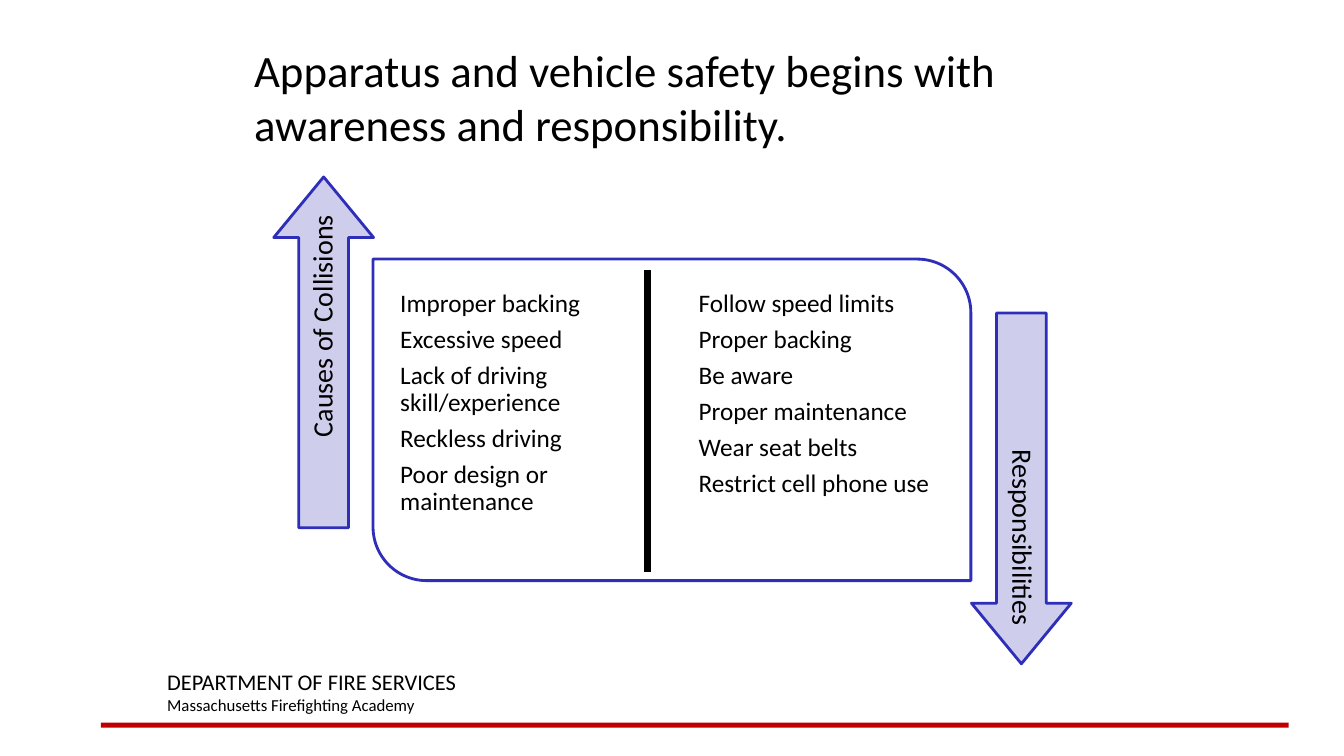
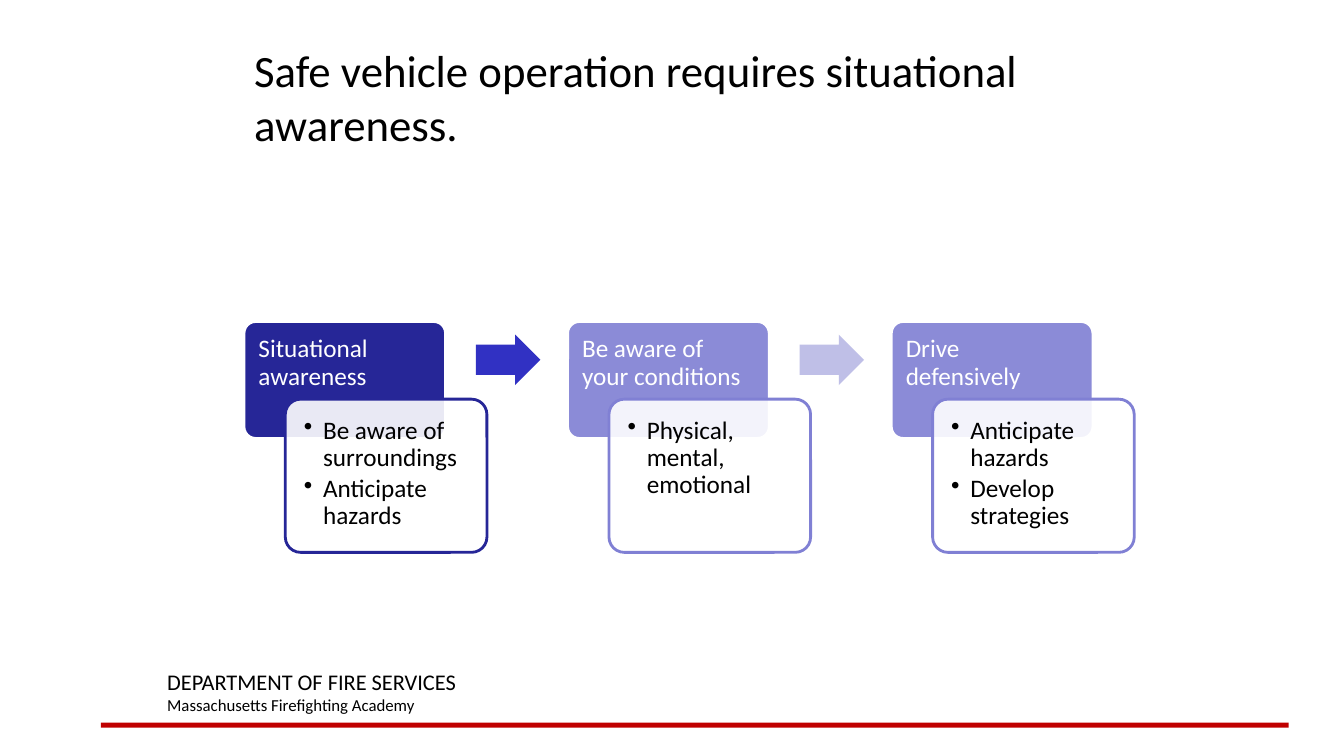
import pptx
import pptx.dml.color
import pptx.enum.shapes
import pptx.enum.text
import pptx.oxml.ns
import pptx.util
from lxml import etree

Inches = pptx.util.Inches
Pt = pptx.util.Pt
RGBColor = pptx.dml.color.RGBColor
SHAPE = pptx.enum.shapes.MSO_SHAPE
ANCHOR = pptx.enum.text.MSO_ANCHOR
ALIGN = pptx.enum.text.PP_ALIGN
qn = pptx.oxml.ns.qn

FONT = "Calibri"
BLACK = RGBColor(0x00, 0x00, 0x00)
WHITE = RGBColor(0xFF, 0xFF, 0xFF)
RED = RGBColor(0xC0, 0x00, 0x00)
BLUE = RGBColor(0x2E, 0x2E, 0xB9)
PALE_BLUE = RGBColor(0xCE, 0xCE, 0xEC)
NAVY = RGBColor(0x26, 0x26, 0x97)
LAVENDER = RGBColor(0x8B, 0x8B, 0xD7)
LAVENDER_EDGE = RGBColor(0x80, 0x80, 0xD4)
BRIGHT_BLUE = RGBColor(0x31, 0x31, 0xC3)
PALE_LAVENDER = RGBColor(0xBF, 0xBF, 0xE7)


def write(frame, lines, sizes=(18,), color=BLACK, align=ALIGN.LEFT, anchor=ANCHOR.TOP,
          insets=(0.1, 0.05, 0.1, 0.05), spacing=1.0, after=0, bullet_indent=0):
    """Fill a text frame; the last size holds for all remaining lines."""
    frame.word_wrap = True
    frame.vertical_anchor = anchor
    (frame.margin_left, frame.margin_top,
     frame.margin_right, frame.margin_bottom) = map(Inches, insets)
    for i, line in enumerate(lines):
        paragraph = frame.paragraphs[0] if i == 0 else frame.add_paragraph()
        paragraph.text = line
        if bullet_indent:
            properties = paragraph._p.get_or_add_pPr()
            properties.set("marL", str(Inches(bullet_indent)))
            properties.set("indent", str(-Inches(bullet_indent)))
            etree.SubElement(properties, qn("a:buChar")).set("char", "•")
        paragraph.alignment = align
        paragraph.line_spacing = spacing
        paragraph.space_before = Pt(0)
        paragraph.space_after = Pt(after)
        paragraph.font.name = FONT
        paragraph.font.size = Pt(sizes[min(i, len(sizes) - 1)])
        paragraph.font.color.rgb = color


def draw(slide, kind, box, fill, line=None, adjustments=()):
    """Add a flat preset shape with a plain fill and an optional 2 pt outline."""
    shape = slide.shapes.add_shape(kind, *map(Inches, box))
    shape.shadow.inherit = False
    shape.fill.solid()
    shape.fill.fore_color.rgb = fill
    if line is None:
        shape.line.fill.background()
    else:
        shape.line.color.rgb = line
        shape.line.width = Pt(2)
    for i, value in enumerate(adjustments):
        shape.adjustments[i] = value
    return shape


deck = pptx.Presentation()
deck.slide_width = Inches(13.33)
deck.slide_height = Inches(7.5)

# Shared by both slides: title, footer text and red rule
slides = []
for heading in ("Apparatus and vehicle safety begins with awareness and responsibility.",
                "Safe vehicle operation requires situational awareness."):
    slide = deck.slides.add_slide(deck.slide_layouts[5])
    title = slide.shapes.title
    title.left, title.top, title.width, title.height = map(Inches, (2.42, 0.33, 9.08, 1.25))
    write(title.text_frame, [heading], sizes=(32,), anchor=ANCHOR.MIDDLE)
    draw(slide, SHAPE.RECTANGLE, (1, 7.17, 11.78, 0.05), RED)
    footer = slide.shapes.add_textbox(*map(Inches, (1.56, 6.58, 5.67, 0.57)))
    write(footer.text_frame,
          ["DEPARTMENT OF FIRE SERVICES", "Massachusetts Firefighting Academy"], sizes=(16, 12))
    slides.append(slide)
causes_slide, awareness_slide = slides

# Slide 1: panel with causes and responsibilities
draw(causes_slide, SHAPE.ROUND_2_DIAG_RECTANGLE, (3.7, 2.57, 5.93, 3.19), WHITE, BLUE, (0, 0.167))
divider = causes_slide.shapes.add_connector(
    pptx.enum.shapes.MSO_CONNECTOR.STRAIGHT, *map(Inches, (6.42, 2.68, 6.42, 5.67)))
divider.line.color.rgb = BLACK
divider.line.width = Pt(5)
etree.SubElement(divider._element.spPr, qn("a:effectLst"))

columns = [
    (3.9, ["Improper backing", "Excessive speed", "Lack of driving skill/experience",
           "Reckless driving", "Poor design or maintenance"]),
    (6.86, ["Follow speed limits", "Proper backing", "Be aware", "Proper maintenance",
            "Wear seat belts", "Restrict cell phone use"]),
]
for left, entries in columns:
    column = causes_slide.shapes.add_textbox(*map(Inches, (left, 2.81, 2.57, 2.71)))
    write(column.text_frame, entries, insets=(0.07,) * 4, spacing=0.9, after=6.3)

# Slide 1: arrows on either side, turned up and down
for label, left, top, rotation in (("Causes of Collisions", 1.47, 3, 270),
                                   ("Responsibilities", 8.39, 4.35, 90)):
    arrow = draw(causes_slide, SHAPE.RIGHT_ARROW, (left, top, 3.48, 0.99),
                 PALE_BLUE, BLUE, (0.498, 0.607))
    arrow.rotation = rotation
    write(arrow.text_frame, [label], sizes=(20,), align=ALIGN.RIGHT, anchor=ANCHOR.MIDDLE,
          insets=(0.08,) * 4, spacing=0.9)

# Slide 2: three steps, each a heading card with an overlapping detail card
STEP_LEFT, STEP_PITCH = 2.42, 3.21
steps = [
    ("Situational awareness", ["Be aware of surroundings", "Anticipate hazards"],
     NAVY, NAVY, BRIGHT_BLUE),
    ("Be aware of your conditions", ["Physical, mental, emotional"],
     LAVENDER, LAVENDER_EDGE, PALE_LAVENDER),
    ("Drive defensively", ["Anticipate hazards", "Develop strategies"],
     LAVENDER, LAVENDER_EDGE, None),
]
for i, (step, details, card_fill, detail_edge, arrow_fill) in enumerate(steps):
    left = STEP_LEFT + i * STEP_PITCH
    card = draw(awareness_slide, SHAPE.ROUNDED_RECTANGLE, (left, 3.19, 2, 1.16),
                card_fill, WHITE, (0.1,))
    write(card.text_frame, [step], color=WHITE, insets=(0.11, 0.11, 0.11, 0.07), spacing=0.9)
    detail = draw(awareness_slide, SHAPE.ROUNDED_RECTANGLE, (left + 0.41, 3.96, 2, 1.52),
                  WHITE, detail_edge, (0.1,))
    fill_color = detail._element.spPr.find(qn("a:solidFill"))[0]
    etree.SubElement(fill_color, qn("a:alpha")).set("val", "90000")
    write(detail.text_frame, details, insets=(0.14,) * 4, spacing=0.9, after=2.7,
          bullet_indent=0.19)
    if arrow_fill is not None:
        draw(awareness_slide, SHAPE.RIGHT_ARROW, (left + 2.3, 3.32, 0.64, 0.5),
             arrow_fill, adjustments=(0.6, 0.5))

deck.save("out.pptx")
